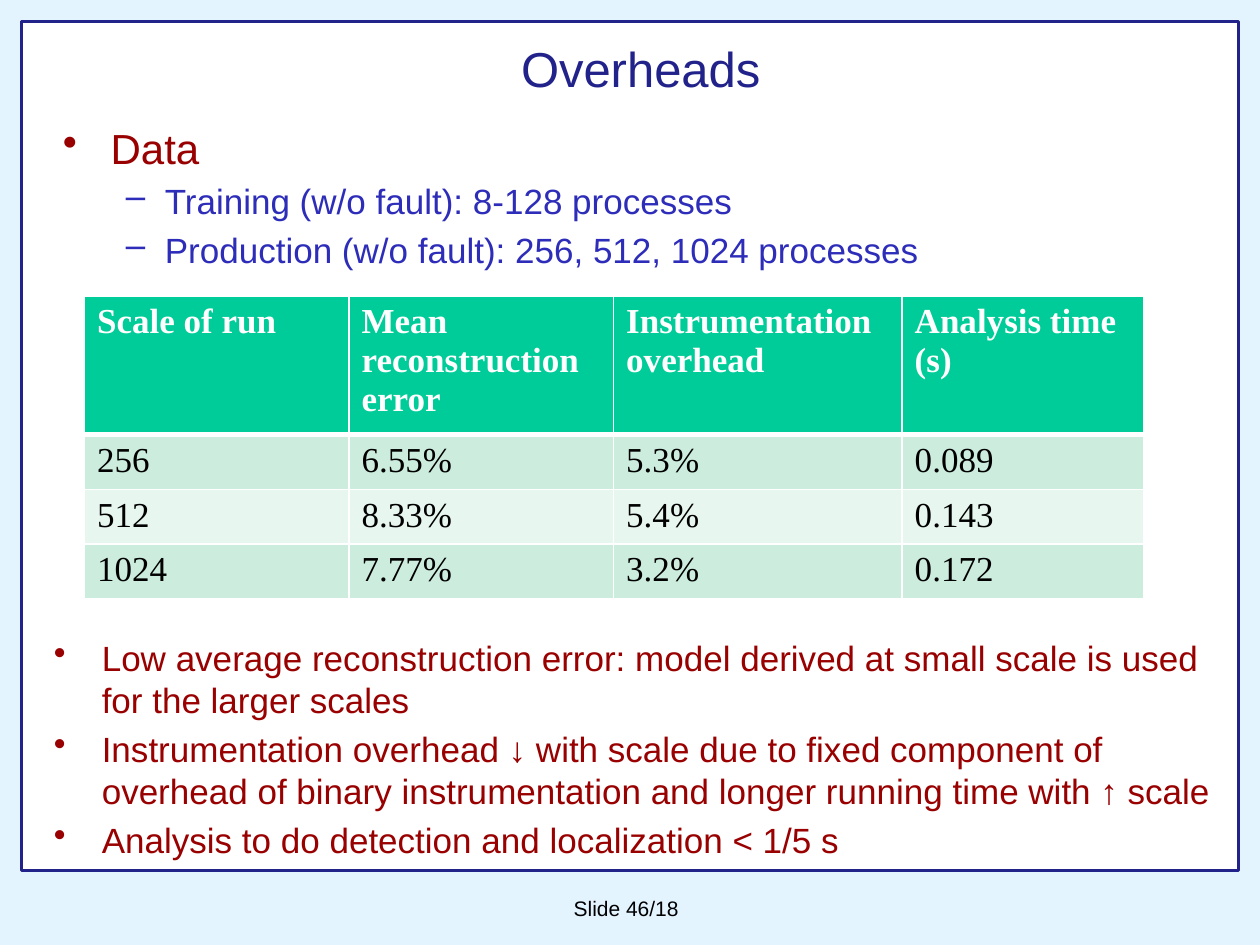
from dataclasses import dataclass

from lxml.etree import SubElement
from pptx import Presentation
from pptx.dml.color import RGBColor
from pptx.enum.shapes import MSO_SHAPE
from pptx.enum.text import MSO_ANCHOR, PP_ALIGN
from pptx.oxml.ns import qn
from pptx.util import Inches, Pt


@dataclass(frozen=True)
class Theme:
    back: str = "E4F4FF"
    white: str = "FFFFFF"
    black: str = "000000"
    navy: str = "22228B"
    red: str = "990000"
    blue: str = "2D2DB9"
    head: str = "00CC99"
    bands: tuple = ("CCECDE", "E7F6EF")
    sans: str = "Arial"
    serif: str = "Times New Roman"
    title: int = 28
    large: int = 24
    body: int = 20
    small: int = 12


def rgb(code):
    return RGBColor.from_string(code)


def inches(*sizes):
    return [Inches(size) for size in sizes]


def apply(target, values):
    for name, value in values.items():
        setattr(target, name, value)


class Deck:
    def __init__(self, theme):
        self.theme = theme
        self.show = Presentation()
        apply(self.show, {"slide_width": Inches(10), "slide_height": Inches(7.5)})
        self.slide = self.show.slides.add_slide(self.show.slide_layouts[6])
        fill = self.slide.background.fill
        fill.solid()
        fill.fore_color.rgb = rgb(theme.back)

    def panel(self, box):
        shape = self.slide.shapes.add_shape(MSO_SHAPE.RECTANGLE, *inches(*box))
        shape.shadow.inherit = False
        shape.fill.solid()
        shape.fill.fore_color.rgb = rgb(self.theme.white)
        shape.line.color.rgb = rgb(self.theme.navy)
        shape.line.width = Pt(1.5)

    def add_text(self, para, text, size, color, face, bold=False):
        run = para.add_run()
        run.text = text
        apply(run.font, {"size": Pt(size), "name": face, "bold": bold})
        run.font.color.rgb = rgb(color)

    def frame(self, box, **values):
        frame = self.slide.shapes.add_textbox(*inches(*box)).text_frame
        apply(frame, {"word_wrap": True, **values})
        return frame

    def label(self, box, text, size, color, **values):
        para = self.frame(box, **values).paragraphs[0]
        para.alignment = PP_ALIGN.CENTER
        self.add_text(para, text, size, color, self.theme.sans)

    def bullets(self, box, items):
        """Each item is (text, level, size, color)."""
        marks = (("•", 0.38, 0.38), ("–", 0.81, 0.31))
        frame = self.frame(box)
        for row, (text, level, size, color) in enumerate(items):
            para = frame.add_paragraph() if row else frame.paragraphs[0]
            mark, left, hang = marks[level]
            para.level = level
            if row:
                para.space_before = Pt(size * 0.2)
            props = para._p.get_or_add_pPr()
            props.set("marL", str(Inches(left)))
            props.set("indent", str(-Inches(hang)))
            SubElement(props, qn("a:buChar"), char=mark)
            self.add_text(para, text, size, color, self.theme.sans)

    def border(self, cell, widths):
        props = cell._tc.get_or_add_tcPr()
        for side, width in zip("LRTB", widths):
            line = SubElement(props, qn(f"a:ln{side}"), w=str(Pt(width)))
            fill = SubElement(line, qn("a:solidFill"))
            SubElement(fill, qn("a:srgbClr"), val=self.theme.white)

    def table(self, box, widths, heights, rows):
        theme = self.theme
        shape = self.slide.shapes.add_table(len(rows), len(widths), *inches(*box))
        table = shape.table
        for col, width in zip(table.columns, widths):
            col.width = Inches(width)
        for row, (height, texts) in enumerate(zip(heights, rows)):
            table.rows[row].height = Inches(height)
            first = row == 0
            shade = theme.head if first else theme.bands[(row - 1) % 2]
            color = theme.white if first else theme.black
            edges = (1, 1, 3 if row == 1 else 1, 3 if first else 1)
            for col, text in enumerate(texts):
                cell = table.cell(row, col)
                self.border(cell, edges)
                cell.fill.solid()
                cell.fill.fore_color.rgb = rgb(shade)
                self.add_text(cell.text_frame.paragraphs[0], text, theme.body,
                              color, theme.serif, first)


def main():
    theme = Theme()
    deck = Deck(theme)
    deck.panel((0.17, 0.17, 9.66, 6.74))
    deck.label((4.44, 7.06, 1.06, 0.3), "Slide 46/18", theme.small, theme.black,
               word_wrap=False)
    deck.label((0.42, 0.25, 9.33, 0.58), "Overheads", theme.title, theme.navy,
               vertical_anchor=MSO_ANCHOR.MIDDLE)
    deck.bullets((0.4, 0.92, 9.27, 1.58), [
        ("Data", 0, theme.large, theme.red),
        ("Training (w/o fault): 8-128 processes", 1, theme.body, theme.blue),
        ("Production (w/o fault): 256, 512, 1024 processes", 1, theme.body,
         theme.blue),
    ])
    deck.table((0.67, 2.35, 8.41, 2.25), (2.1, 2.1, 2.29, 1.92),
               (1.02, 0.41, 0.41, 0.41), [
        ("Scale of run", "Mean reconstruction error",
         "Instrumentation overhead", "Analysis time (s)"),
        ("256", "6.55%", "5.3%", "0.089"),
        ("512", "8.33%", "5.4%", "0.143"),
        ("1024", "7.77%", "3.2%", "0.172"),
    ])
    notes = (
        "Low average reconstruction error: model derived at small scale is used "
        "for the larger scales",
        "Instrumentation overhead ↓ with scale due to fixed component of overhead "
        "of binary instrumentation and longer running time with ↑ scale",
        "Analysis to do detection and localization < 1/5 s",
    )
    deck.bullets((0.33, 5, 9.66, 1.58),
                 [(note, 0, theme.body, theme.red) for note in notes])
    deck.show.save("out.pptx")


if __name__ == "__main__":
    main()
